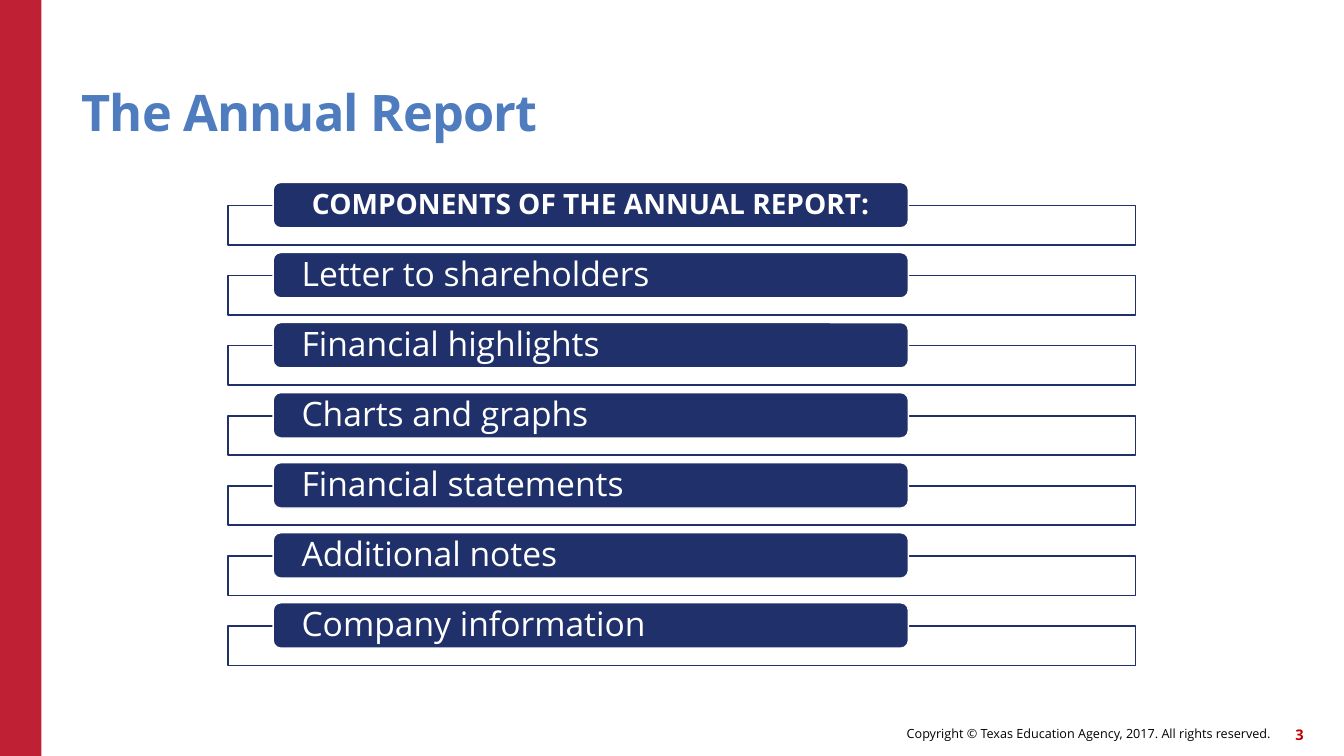
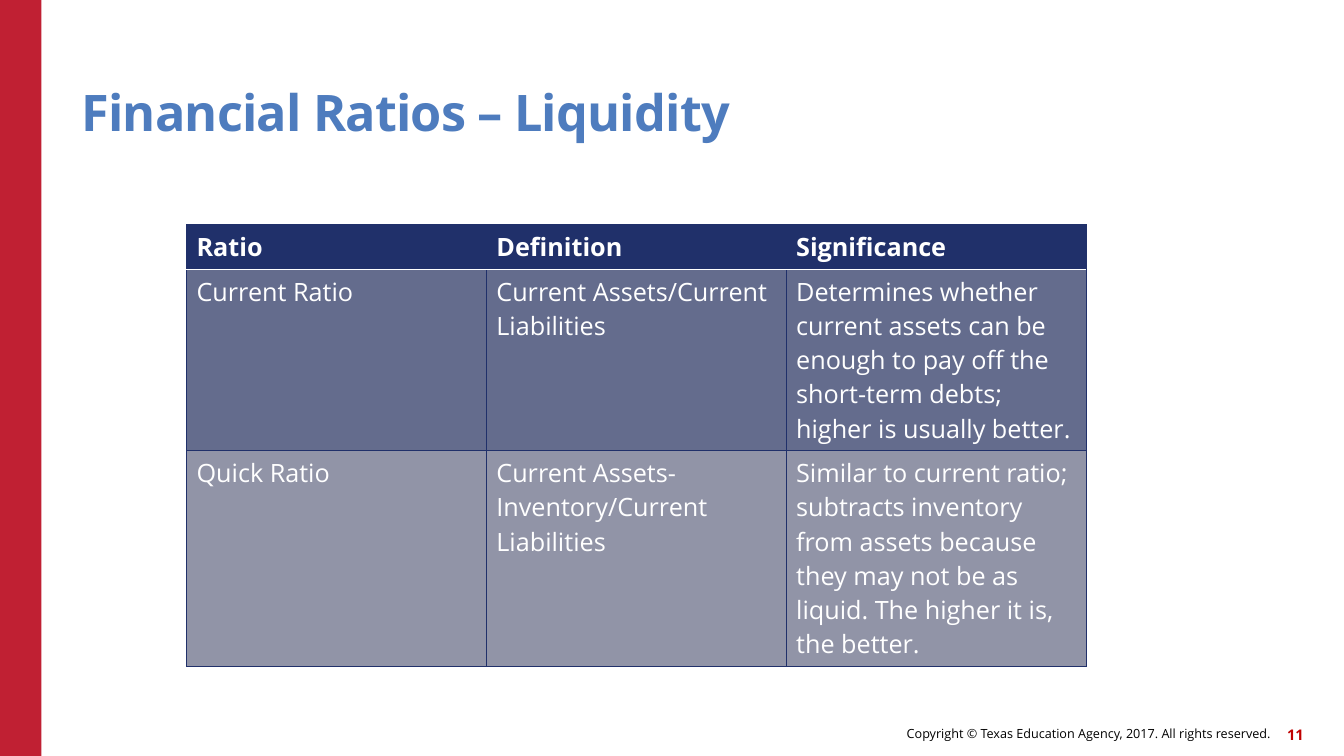
"""Build two slides on annual reports and liquidity ratios."""
from dataclasses import dataclass

from lxml import etree
from pptx import Presentation
from pptx.dml.color import RGBColor
from pptx.enum.shapes import MSO_SHAPE
from pptx.enum.text import MSO_ANCHOR, PP_ALIGN
from pptx.oxml.ns import qn
from pptx.util import Inches, Pt

RECT = MSO_SHAPE.RECTANGLE
ROUND = MSO_SHAPE.ROUNDED_RECTANGLE
LEFT, MID, RIGHT = PP_ALIGN.LEFT, PP_ALIGN.CENTER, PP_ALIGN.RIGHT
CENTER, BOTTOM = MSO_ANCHOR.MIDDLE, MSO_ANCHOR.BOTTOM


@dataclass(frozen=True)
class Theme:
    font: str = "Open Sans"
    red: str = "C02033"
    blue: str = "4E7CBE"
    navy: str = "20306A"
    slate: str = "646C8D"
    gray: str = "9194A7"
    white: str = "FFFFFF"
    black: str = "000000"
    num: str = "C00000"
    title: float = 36
    item: float = 24
    lead: float = 20
    cell: float = 18
    page: float = 10.5
    foot: float = 9


class Deck:
    def __init__(self, theme):
        self.theme = theme
        self.prs = Presentation()
        self.prs.slide_width = Inches(13.33)
        self.prs.slide_height = Inches(7.5)
        self.slide = None

    def start(self, title, page):
        t = self.theme
        self.slide = self.prs.slides.add_slide(self.prs.slide_layouts[6])
        self.shape(RECT, (0, 0, 0.41, 7.5), t.red)
        self.label("Copyright © Texas Education Agency, 2017. All rights reserved.",
                   (6.14, 7.12, 6.46, 0.32), t.foot, t.black, align=RIGHT)
        self.label(str(page), (12.51, 7.13, 0.42, 0.32), t.page, t.num,
                   bold=True, align=RIGHT)
        box = self.label(title, (0.81, 0.45, 11, 0.96), t.title, t.blue,
                         bold=True, anchor=BOTTOM)
        para = box.text_frame.paragraphs[0]
        para.line_spacing = 0.9
        para.runs[0].font._element.set("spc", "-60")

    def style(self, para, size, color, bold=False, align=LEFT):
        para.alignment = align
        for run in para.runs:
            font = run.font
            font.name = self.theme.font
            font.size = Pt(size)
            font.bold = bold
            font.color.rgb = RGBColor.from_string(color)

    def fill(self, item, color):
        item.fill.solid()
        item.fill.fore_color.rgb = RGBColor.from_string(color)

    def put(self, frame, text, size, color, bold, align, anchor, inset=0):
        frame.text = text
        frame.word_wrap = True
        frame.vertical_anchor = anchor
        frame.margin_left = frame.margin_right = Inches(inset)
        frame.margin_top = frame.margin_bottom = 0
        self.style(frame.paragraphs[0], size, color, bold, align)

    def label(self, text, at, size, color, bold=False, align=LEFT, anchor=CENTER):
        box = self.slide.shapes.add_textbox(*map(Inches, at))
        self.put(box.text_frame, text, size, color, bold, align, anchor)
        return box

    def shape(self, kind, at, fill, line=None):
        shape = self.slide.shapes.add_shape(kind, *map(Inches, at))
        shape.shadow.inherit = False
        self.fill(shape, fill)
        if line:
            shape.line.color.rgb = RGBColor.from_string(line)
            shape.line.width = Pt(1)
        else:
            shape.line.fill.background()
        return shape

    def bars(self, lead, items):
        t = self.theme
        top, last = 1.81, 5.98
        step = (last - top) / len(items)
        for i, text in enumerate([lead, *items]):
            y = top + i * step
            head = i == 0
            self.shape(RECT, (2.26, y + 0.23, 9, 0.39), t.white, t.navy)
            bar = self.shape(ROUND, (2.71, y, 6.3, 0.45), t.navy, t.white)
            self.put(bar.text_frame, text, t.lead if head else t.item, t.white,
                     head, MID if head else LEFT, CENTER, 0.26)
            bar.text_frame.paragraphs[0].line_spacing = 0.9

    def edge(self, cell, side, color, width):
        props = cell._tc.get_or_add_tcPr()
        line = etree.Element(qn(f"a:ln{side}"), w=str(Pt(width)))
        solid = etree.SubElement(line, qn("a:solidFill"))
        etree.SubElement(solid, qn("a:srgbClr"), val=color)
        props.insert("LRTB".index(side), line)

    def table(self, rows, at, highs):
        t = self.theme
        grid = self.slide.shapes.add_table(
            len(rows), len(rows[0]), *map(Inches, (*at, sum(highs)))).table
        fills = (t.navy, t.slate, t.gray)
        for r, row in enumerate(rows):
            grid.rows[r].height = Inches(highs[r])
            for c, text in enumerate(row):
                cell = grid.cell(r, c)
                cell.text = text
                self.style(cell.text_frame.paragraphs[0], t.cell, t.white, r == 0)
                self.fill(cell, fills[r])
                for side in "LRTB":
                    pale = (r, side) in ((0, "B"), (1, "T"))
                    self.edge(cell, side, t.white if pale else t.navy,
                              1 if pale else 0.5)


def main():
    deck = Deck(Theme())
    deck.start("The Annual Report", 3)
    deck.bars("COMPONENTS OF THE ANNUAL REPORT:", [
        "Letter to shareholders",
        "Financial highlights",
        "Charts and graphs",
        "Financial statements",
        "Additional notes",
        "Company information",
    ])
    deck.start("Financial Ratios – Liquidity", 11)
    deck.table([
        ("Ratio", "Definition", "Significance"),
        ("Current Ratio", "Current Assets/Current Liabilities",
         "Determines whether current assets can be enough to pay off the "
         "short-term debts; higher is usually better."),
        ("Quick Ratio", "Current Assets-Inventory/Current Liabilities",
         "Similar to current ratio; subtracts inventory from assets because "
         "they may not be as liquid. The higher it is, the better."),
    ], (1.85, 2.23, 8.92), (0.44, 1.8, 2.14))
    deck.prs.save("out.pptx")


if __name__ == "__main__":
    main()
